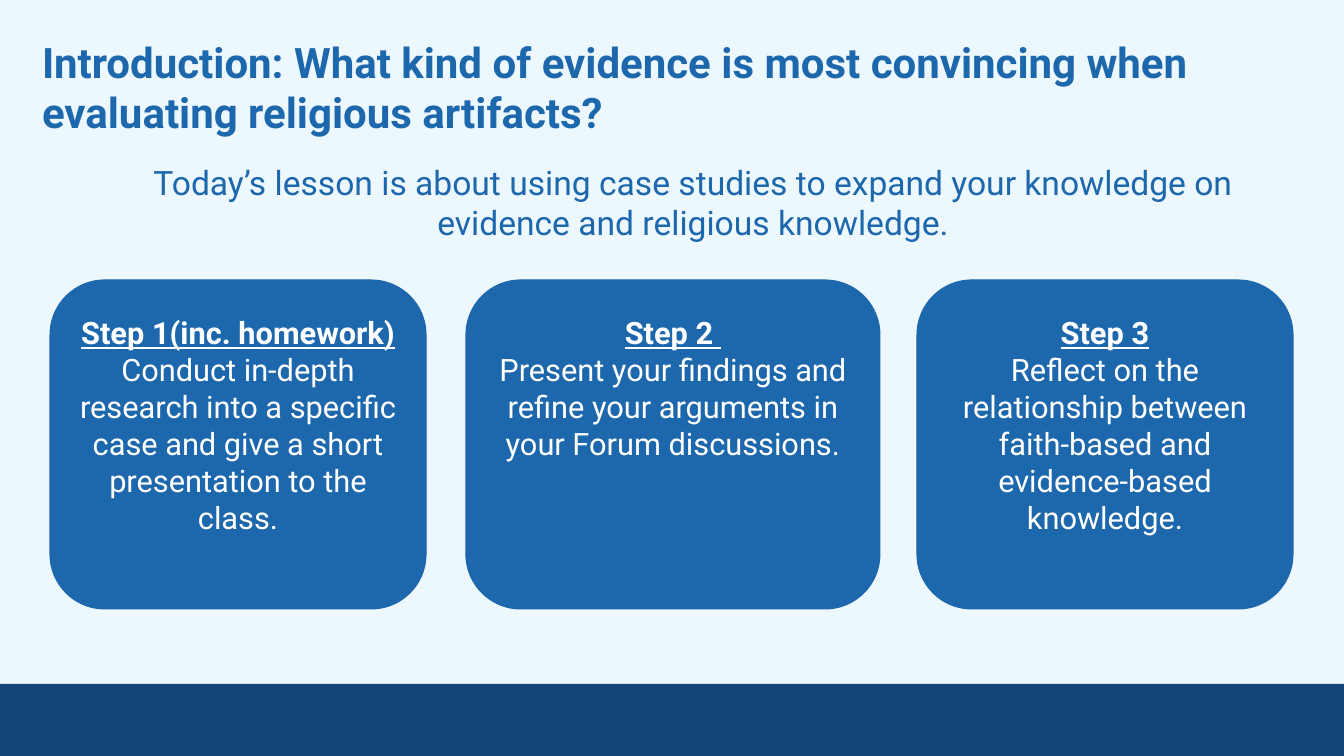
import pptx
import pptx.util
import pptx.dml.color
import pptx.enum.shapes
import pptx.enum.text

EMU_PER_PX = 914400 / 100.8
FONT = "Roboto"
BLUE, NAVY, PALE, WHITE = "1D67AC", "144777", "ECF8FE", "FFFFFF"


def px(length):
    return pptx.util.Emu(round(length * EMU_PER_PX))


def paint(color_format, hex_color):
    color_format.rgb = pptx.dml.color.RGBColor.from_string(hex_color)


presentation = pptx.Presentation()
presentation.slide_width, presentation.slide_height = px(1344), px(756)
slide = presentation.slides.add_slide(presentation.slide_layouts[5])
slide.background.fill.solid()
paint(slide.background.fill.fore_color, PALE)

# Footer band
footer = slide.shapes.add_shape(
    pptx.enum.shapes.MSO_SHAPE.RECTANGLE, px(0), px(684), px(1344), px(72))
footer.shadow.inherit = False
footer.fill.solid()
paint(footer.fill.fore_color, NAVY)
footer.line.fill.background()

# Title and lesson summary
question = slide.shapes.title
question.left, question.top, question.width, question.height = px(29), px(23), px(1229), px(129)
summary = slide.shapes.add_textbox(px(92), px(152), px(1202), px(142))
headings = [
    (question, "Introduction: What kind of evidence is most convincing when evaluating religious artifacts?",
     13, 30, True, pptx.enum.text.PP_ALIGN.LEFT),
    (summary, "Today’s lesson is about using case studies to expand your knowledge on evidence and religious knowledge.",
     10, 24, False, pptx.enum.text.PP_ALIGN.CENTER),
]
for heading, wording, inset, size, bold, alignment in headings:
    frame = heading.text_frame
    frame.word_wrap = True
    frame.auto_size = pptx.enum.text.MSO_AUTO_SIZE.NONE
    frame.vertical_anchor = pptx.enum.text.MSO_ANCHOR.TOP
    frame.margin_left = frame.margin_right = frame.margin_top = frame.margin_bottom = px(inset)
    frame.text = wording
    paragraph = frame.paragraphs[0]
    paragraph.alignment = alignment
    paragraph.font.name, paragraph.font.size, paragraph.font.bold = FONT, pptx.util.Pt(size), bold
    paint(paragraph.font.color, BLUE)

# Step cards
steps = [
    (50, 376, "Step 1(inc. homework)",
     "Conduct in-depth research into a specific case and give a short presentation to the class."),
    (466, 414, "Step 2 ",
     "Present your findings and refine your arguments in your Forum discussions."),
    (917, 376, "Step 3",
     "Reflect on the relationship between faith-based and evidence-based knowledge."),
]
for left, width, step, task in steps:
    card = slide.shapes.add_shape(
        pptx.enum.shapes.MSO_SHAPE.ROUNDED_RECTANGLE, px(left), px(280), px(width), px(329))
    card.shadow.inherit = False
    card.fill.solid()
    paint(card.fill.fore_color, BLUE)
    paint(card.line.color, BLUE)
    card.line.width = pptx.util.Pt(0.75)
    frame = card.text_frame
    frame.word_wrap = True
    frame.vertical_anchor = pptx.enum.text.MSO_ANCHOR.TOP
    frame.margin_left = frame.margin_right = frame.margin_bottom = px(10)
    frame.margin_top = px(18)
    frame.text = f"{step}\n{task}"
    for paragraph, is_step in zip(frame.paragraphs, (True, False)):
        paragraph.alignment = pptx.enum.text.PP_ALIGN.CENTER
        paragraph.font.name, paragraph.font.size = FONT, pptx.util.Pt(22)
        paragraph.font.bold = paragraph.font.underline = is_step
        paint(paragraph.font.color, WHITE)

presentation.save("out.pptx")
